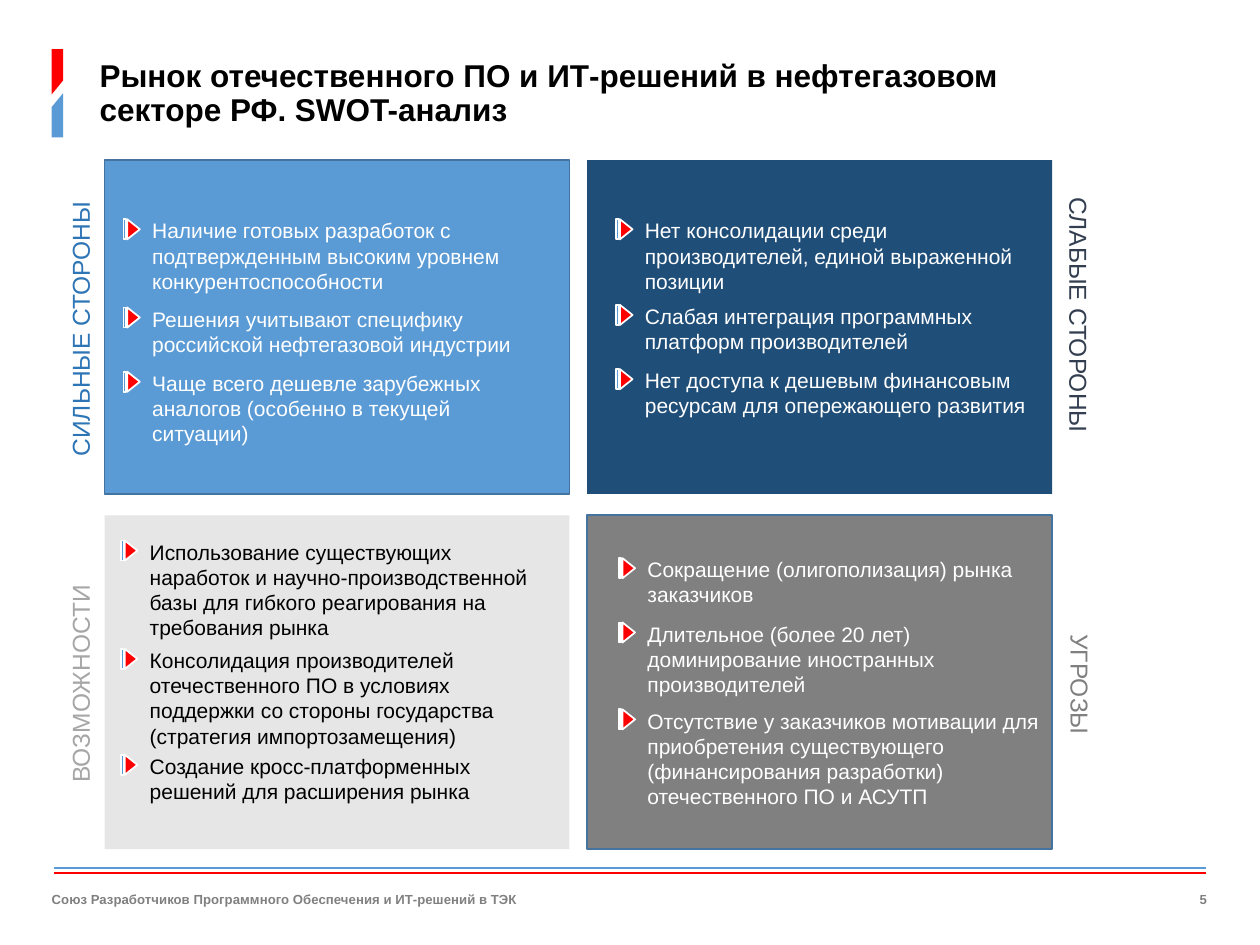
from dataclasses import dataclass

from lxml.etree import SubElement
from pptx import Presentation
from pptx.dml.color import RGBColor
from pptx.enum.shapes import MSO_CONNECTOR, MSO_SHAPE
from pptx.enum.text import MSO_ANCHOR, MSO_AUTO_SIZE, PP_ALIGN
from pptx.oxml.ns import qn
from pptx.shapes.autoshape import Shape
from pptx.shapes.shapetree import SlideShapes
from pptx.text.text import TextFrame
from pptx.util import Inches, Pt


@dataclass(frozen=True)
class Theme:
    font: str = "Arial"
    blue: str = "5B9BD5"
    navy: str = "1F4E79"
    pale: str = "E7E6E6"
    gray: str = "808080"
    red: str = "FF0000"
    white: str = "FFFFFF"
    black: str = "000000"
    outline: str = "43739E"
    strengths: str = "2E75B6"
    weaknesses: str = "333F50"
    opportunities: str = "A6A6A6"
    title_size: float = 18
    label_size: float = 14
    body_size: float = 12
    footer_size: float = 7.5


@dataclass(frozen=True)
class Point:
    top: float
    height: float
    text: str


@dataclass(frozen=True)
class Quadrant:
    column: int
    row: int
    fill: str
    outline: str | None
    text_color: str
    text_left: float
    label: str
    label_color: str
    label_center: tuple[float, float]
    label_width: float
    points: tuple[Point, ...]


THEME = Theme()
PANEL_WIDTH, PANEL_HEIGHT = 3.69, 2.65
PANEL_LEFT, PANEL_TOP = 0.83, 1.27
COLUMN_STEP, ROW_STEP = 3.83, 2.82
LABEL_HEIGHT = 0.34

QUADRANTS = (
    Quadrant(0, 0, THEME.blue, THEME.outline, THEME.white, 1.11,
             "СИЛЬНЫЕ СТОРОНЫ", THEME.strengths, (0.64, 2.6), 2.24, (
                 Point(1.68, 0.71, "Наличие готовых разработок с подтвержденным высоким уровнем конкурентоспособности"),
                 Point(2.38, 0.5, "Решения учитывают специфику российской нефтегазовой индустрии"),
                 Point(2.89, 0.71, "Чаще всего дешевле зарубежных аналогов (особенно в текущей ситуации)"))),
    Quadrant(1, 0, THEME.navy, None, THEME.white, 5.02,
             "СЛАБЫЕ СТОРОНЫ", THEME.weaknesses, (8.56, 2.51), 2.08, (
                 Point(1.68, 0.71, "Нет консолидации среди производителей, единой выраженной позиции"),
                 Point(2.36, 0.5, "Слабая интеграция программных платформ производителей"),
                 Point(2.87, 0.5, "Нет доступа к дешевым финансовым ресурсам для опережающего развития"))),
    Quadrant(0, 1, THEME.pale, None, THEME.black, 1.09,
             "ВОЗМОЖНОСТИ", THEME.opportunities, (0.64, 5.42), 1.78, (
                 Point(4.23, 0.91, "Использование существующих наработок и научно-производственной базы для гибкого реагирования на требования рынка"),
                 Point(5.09, 0.91, "Консолидация производителей отечественного ПО в условиях поддержки со стороны государства (стратегия импортозамещения)"),
                 Point(5.93, 0.5, "Создание кросс-платформенных решений для расширения рынка"))),
    Quadrant(1, 1, THEME.gray, THEME.outline, THEME.white, 5.04,
             "УГРОЗЫ", THEME.gray, (8.57, 5.44), 1.01, (
                 Point(4.37, 0.5, "Сокращение (олигополизация) рынка заказчиков"),
                 Point(4.88, 0.71, "Длительное (более 20 лет) доминирование иностранных производителей"),
                 Point(5.57, 0.91, "Отсутствие у заказчиков мотивации для приобретения существующего (финансирования разработки) отечественного ПО и АСУТП"))),
)


def write(frame: TextFrame, text: str, size: float, color: str, bold: bool = False,
          align: PP_ALIGN = PP_ALIGN.LEFT) -> None:
    frame.text = text
    paragraph = frame.paragraphs[0]
    paragraph.alignment = align
    font = paragraph.runs[0].font
    font.name, font.size, font.bold = THEME.font, Pt(size), bold
    font.color.rgb = RGBColor.from_string(color)


def paint(shape: Shape, fill: str, outline: str | None = None) -> None:
    shape.shadow.inherit = False
    shape.fill.solid()
    shape.fill.fore_color.rgb = RGBColor.from_string(fill)
    if outline:
        shape.line.color.rgb = RGBColor.from_string(outline)
        shape.line.width = Pt(1)
    else:
        shape.line.fill.background()


def add_preset(shapes: SlideShapes, preset: MSO_SHAPE, left: float, top: float, width: float,
               height: float, fill: str, outline: str | None) -> Shape:
    shape = shapes.add_shape(preset, Inches(left), Inches(top), Inches(width), Inches(height))
    paint(shape, fill, outline)
    return shape


def add_text(shapes: SlideShapes, left: float, top: float, width: float, height: float) -> Shape:
    box = shapes.add_textbox(Inches(left), Inches(top), Inches(width), Inches(height))
    box.text_frame.word_wrap = True
    return box


def add_point(shapes: SlideShapes, point: Point, left: float, color: str) -> None:
    marker_left = left - 0.13
    arrow = add_preset(shapes, MSO_SHAPE.ISOSCELES_TRIANGLE, marker_left, point.top + 0.09,
                       0.16, 0.1, THEME.red, THEME.white)
    arrow.rotation = 90
    add_preset(shapes, MSO_SHAPE.RECTANGLE, marker_left, point.top + 0.06,
               0.02, 0.16, THEME.blue, THEME.white)
    frame = add_text(shapes, left, point.top, 3.34, point.height).text_frame
    frame.auto_size = MSO_AUTO_SIZE.SHAPE_TO_FIT_TEXT
    write(frame, point.text, THEME.body_size, color)


def add_quadrant(shapes: SlideShapes, quadrant: Quadrant) -> None:
    add_preset(shapes, MSO_SHAPE.RECTANGLE,
               PANEL_LEFT + quadrant.column * COLUMN_STEP, PANEL_TOP + quadrant.row * ROW_STEP,
               PANEL_WIDTH, PANEL_HEIGHT, quadrant.fill, quadrant.outline)
    center_x, center_y = quadrant.label_center
    label = add_text(shapes, center_x - quadrant.label_width / 2, center_y - LABEL_HEIGHT / 2,
                     quadrant.label_width, LABEL_HEIGHT)
    label.rotation = 90 if quadrant.column else 270
    label.text_frame.word_wrap = False
    label.text_frame.auto_size = MSO_AUTO_SIZE.SHAPE_TO_FIT_TEXT
    write(label.text_frame, quadrant.label, THEME.label_size, quadrant.label_color)
    for point in quadrant.points:
        add_point(shapes, point, quadrant.text_left, quadrant.text_color)


def add_ribbon(shapes: SlideShapes, corners: tuple[tuple[float, float], ...], color: str) -> None:
    start, *rest = [(Inches(x), Inches(y)) for x, y in corners]
    builder = shapes.build_freeform(*start)
    builder.add_line_segments(rest, close=True)
    paint(builder.convert_to_shape(), color)


def add_rule(shapes: SlideShapes, y: float, color: str) -> None:
    rule = shapes.add_connector(MSO_CONNECTOR.STRAIGHT, Inches(0.43), Inches(y), Inches(9.57), Inches(y))
    rule.line.color.rgb = RGBColor.from_string(color)
    rule.line.width = Pt(1.5)
    SubElement(rule._element.spPr, qn("a:effectLst"))


def add_footer(shapes: SlideShapes, left: float, width: float, text: str, align: PP_ALIGN) -> None:
    frame = add_text(shapes, left, 6.93, width, 0.42).text_frame
    frame.margin_left = frame.margin_right = frame.margin_top = frame.margin_bottom = 0
    frame.vertical_anchor = MSO_ANCHOR.MIDDLE
    write(frame, text, THEME.footer_size, THEME.gray, True, align)


def main() -> None:
    deck = Presentation()
    deck.slide_width, deck.slide_height = Inches(10), Inches(7.5)
    shapes = deck.slides.add_slide(deck.slide_layouts[5]).shapes

    title = shapes.title
    title.left, title.top, title.width, title.height = Inches(0.69), Inches(0.4), Inches(7.73), Inches(0.69)
    title.text_frame.vertical_anchor = MSO_ANCHOR.MIDDLE
    title.text_frame.auto_size = MSO_AUTO_SIZE.NONE
    write(title.text_frame, "Рынок отечественного ПО и ИТ-решений в нефтегазовом секторе РФ. SWOT-анализ",
          THEME.title_size, THEME.black, True)
    title.text_frame.paragraphs[0].line_spacing = 0.9

    add_footer(shapes, 0.41, 3.78, "Союз Разработчиков Программного Обеспечения и ИТ-решений в ТЭК", PP_ALIGN.LEFT)
    add_rule(shapes, 6.89, THEME.blue)
    add_rule(shapes, 6.93, THEME.red)
    add_footer(shapes, 5.85, 3.73, "5", PP_ALIGN.RIGHT)
    add_ribbon(shapes, ((0.41, 0.85), (0.5, 0.74), (0.5, 1.09), (0.41, 1.09)), THEME.blue)
    add_ribbon(shapes, ((0.5, 0.64), (0.41, 0.75), (0.41, 0.39), (0.5, 0.39)), THEME.red)
    for quadrant in QUADRANTS:
        add_quadrant(shapes, quadrant)

    deck.save("out.pptx")


if __name__ == "__main__":
    main()
